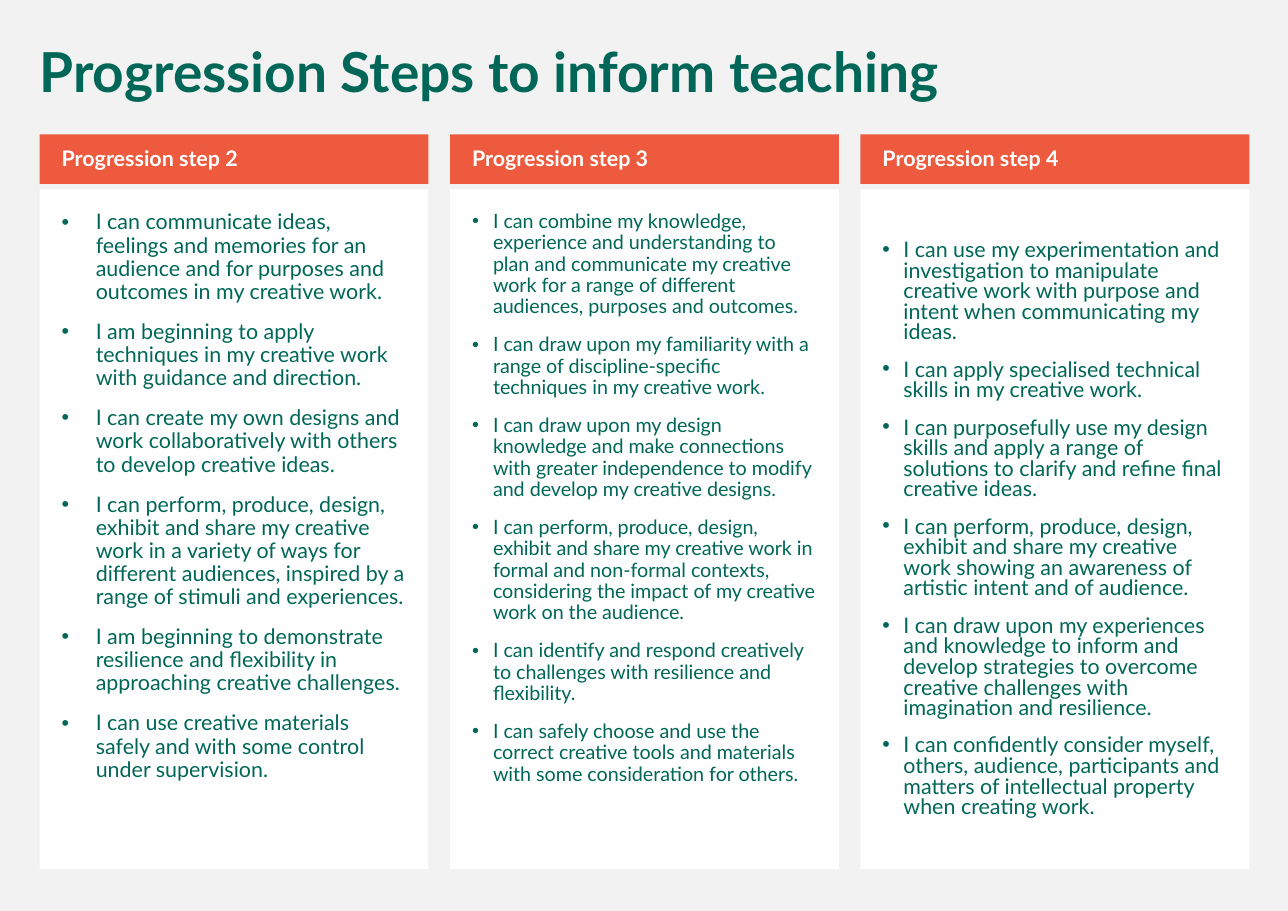
from dataclasses import dataclass

from lxml.etree import SubElement
from pptx import Presentation
from pptx.dml.color import RGBColor as RGB
from pptx.enum.shapes import MSO_SHAPE as Shape
from pptx.enum.text import MSO_ANCHOR as Anchor, PP_ALIGN as Align
from pptx.oxml.ns import qn
from pptx.util import Inches, Pt


@dataclass(frozen=True)
class Theme:
    font: str = "Lato"
    page: RGB = RGB(0xF2, 0xF2, 0xF2)
    green: RGB = RGB(0x00, 0x67, 0x58)
    coral: RGB = RGB(0xED, 0x5A, 0x3E)
    white: RGB = RGB(0xFF, 0xFF, 0xFF)
    title: float = 36
    body: float = 14
    small: float = 12.9
    gap: float = 11


THEME = Theme()
LEFT, RIGHT, WIDTH = 0.36, 11.34, 3.53

# Each step: heading, text format, list items
STEPS = [
    ("Progression step 2", dict(size=THEME.body, indent=0.31, line=0.9, top=0.2), [
        "I can communicate ideas, feelings and memories for an audience and for purposes and outcomes in my creative work.",
        "I am beginning to apply techniques in my creative work with guidance and direction.",
        "I can create my own designs and work collaboratively with others to develop creative ideas.",
        "I can perform, produce, design, exhibit and share my creative work in a variety of ways for different audiences, inspired by a range of stimuli and experiences.",
        "I am beginning to demonstrate resilience and flexibility in approaching creative challenges.",
        "I can use creative materials safely and with some control under supervision.",
    ]),
    ("Progression step 3", dict(size=THEME.small, indent=0.19, line=0.9, top=0.2), [
        "I can combine my knowledge, experience and understanding to plan and communicate my creative work for a range of different audiences, purposes and outcomes.",
        "I can draw upon my familiarity with a range of discipline-specific techniques in my creative work.",
        "I can draw upon my design knowledge and make connections with greater independence to modify and develop my creative designs.",
        "I can perform, produce, design, exhibit and share my creative work in formal and non-formal contexts, considering the impact of my creative work on the audience.",
        "I can identify and respond creatively to challenges with resilience and flexibility.",
        "I can safely choose and use the correct creative tools and materials with some consideration for others.",
    ]),
    ("Progression step 4", dict(size=THEME.body, indent=0.19, line=0.8, top=0.47), [
        "I can use my experimentation and investigation to manipulate creative work with purpose and intent when communicating my ideas.",
        "I can apply specialised technical skills in my creative work.",
        "I can purposefully use my design skills and apply a range of solutions to clarify and refine final creative ideas.",
        "I can perform, produce, design, exhibit and share my creative work showing an awareness of artistic intent and of audience.",
        "I can draw upon my experiences and knowledge to inform and develop strategies to overcome creative challenges with imagination and resilience.",
        "I can confidently consider myself, others, audience, participants and matters of intellectual property when creating work.",
    ]),
]


def put(item, **values):
    """Set each named value on the item."""
    for name, value in values.items():
        setattr(item, name, value)


def set_frame(shape, insets, anchor=Anchor.TOP):
    frame = shape.text_frame
    put(frame, word_wrap=True, vertical_anchor=anchor)
    for side, inset in zip(("left", "top", "right", "bottom"), insets):
        setattr(frame, f"margin_{side}", Inches(inset))
    return frame


def write(para, text, size, color, bold=False, line=0.9):
    put(para, alignment=Align.LEFT, line_spacing=line, space_before=Pt(THEME.gap))
    run = para.add_run()
    run.text = text
    put(run.font, name=THEME.font, size=Pt(size), bold=bold)
    run.font.color.rgb = color


def add_bullet(para, indent):
    props = para._p.get_or_add_pPr()
    props.set("marL", str(Inches(indent)))
    props.set("indent", str(-Inches(indent)))
    SubElement(props, qn("a:buFont"), typeface="Arial")
    SubElement(props, qn("a:buChar"), char="•")


def add_box(slide, left, top, height, color):
    box = slide.shapes.add_shape(
        Shape.RECTANGLE, Inches(left), Inches(top), Inches(WIDTH), Inches(height))
    box.shadow.inherit = False
    box.fill.solid()
    box.fill.fore_color.rgb = color
    box.line.fill.background()
    return box


def add_list(slide, left, items, size, indent, line, top):
    box = add_box(slide, left, 1.72, 6.17, THEME.white)
    frame = set_frame(box, (0.2, top, 0.2, 0.2))
    for index, item in enumerate(items):
        para = frame.add_paragraph() if index else frame.paragraphs[0]
        write(para, item, size, THEME.green, line=line)
        add_bullet(para, indent)


def add_head(slide, left, text):
    box = add_box(slide, left, 1.22, 0.45, THEME.coral)
    frame = set_frame(box, (0.2, 0.05, 0.1, 0.05), Anchor.MIDDLE)
    write(frame.paragraphs[0], text, THEME.body, THEME.white, bold=True)


def add_title(slide, text):
    box = slide.shapes.add_textbox(
        Inches(0.26), Inches(0.36), Inches(11.08), Inches(0.65))
    frame = set_frame(box, (0.1, 0.05, 0.1, 0.05))
    write(frame.paragraphs[0], text, THEME.title, THEME.green, bold=True)


def main():
    deck = Presentation()
    put(deck, slide_width=Inches(11.69), slide_height=Inches(8.27))
    slide = deck.slides.add_slide(deck.slide_layouts[6])
    slide.background.fill.solid()
    slide.background.fill.fore_color.rgb = THEME.page

    pitch = (RIGHT - LEFT - WIDTH) / (len(STEPS) - 1)
    for index, (head, style, items) in enumerate(STEPS):
        left = LEFT + index * pitch
        add_list(slide, left, items, **style)
        add_head(slide, left, head)
    add_title(slide, "Progression Steps to inform teaching")
    deck.save("out.pptx")


if __name__ == "__main__":
    main()
